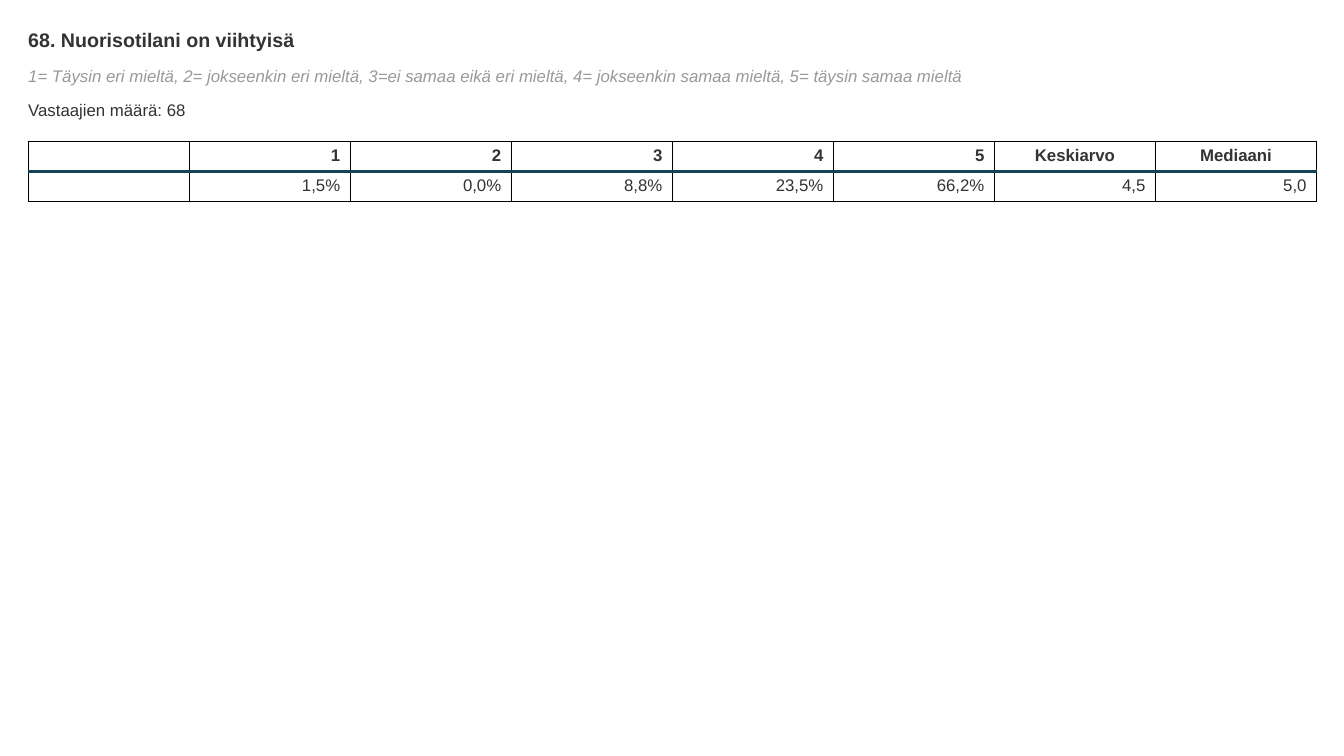
from lxml.etree import SubElement
from pptx import Presentation
from pptx.dml.color import RGBColor
from pptx.enum.text import MSO_ANCHOR, MSO_AUTO_SIZE, PP_ALIGN
from pptx.oxml.ns import qn
from pptx.util import Inches, Pt

DARK = RGBColor(0x33, 0x33, 0x33)
GREY = RGBColor(0x99, 0x99, 0x99)
BLACK = RGBColor(0, 0, 0)
TEAL = RGBColor(0x12, 0x44, 0x56)

LEFT, WIDTH = 0.28, 12.78
ROW_HEIGHT = 0.3
HEADINGS = ["", "1", "2", "3", "4", "5", "Keskiarvo", "Mediaani"]
RESULTS = ["", "1,5%", "0,0%", "8,8%", "23,5%", "66,2%", "4,5", "5,0"]


def write(para, text, align=PP_ALIGN.LEFT, color=DARK, **formats):
    para.alignment = align
    span = para.add_run()
    span.text = text
    span.font.color.rgb = color
    values = {"name": "Arial", "size": Pt(12), "bold": False, **formats}
    for name, value in values.items():
        setattr(span.font, name, value)


def fill_line(box, top, height, text, **formats):
    box.left, box.top = Inches(LEFT), Inches(top)
    box.width, box.height = Inches(WIDTH), Inches(height)
    frame = box.text_frame
    settings = {
        "word_wrap": True,
        "auto_size": MSO_AUTO_SIZE.SHAPE_TO_FIT_TEXT,
        "vertical_anchor": MSO_ANCHOR.TOP,
        "margin_left": 0,
        "margin_right": 0,
        "margin_top": 0,
        "margin_bottom": 0,
    }
    for name, value in settings.items():
        setattr(frame, name, value)
    write(frame.paragraphs[0], text, **formats)


def add_line(page, top, text, **formats):
    box = page.shapes.add_textbox(0, 0, 0, 0)
    fill_line(box, top, 0.2, text, **formats)


def set_borders(cell, colors):
    properties = cell._tc.get_or_add_tcPr()
    for side, color in colors.items():
        points = 2 if color == TEAL else 1
        line = SubElement(properties, qn(f"a:ln{side}"), w=str(Pt(points)))
        fill = SubElement(line, qn("a:solidFill"))
        SubElement(fill, qn("a:srgbClr"), val=str(color))


def add_results(page, left, top, width):
    rows = [HEADINGS, RESULTS]
    frame = page.shapes.add_table(
        len(rows), len(HEADINGS), Inches(left), Inches(top),
        Inches(width), Inches(ROW_HEIGHT * len(rows)))
    table = frame.table
    table.first_row = table.horz_banding = False
    for row, texts in enumerate(rows):
        heading = row == 0
        for column, text in enumerate(texts):
            cell = table.cell(row, column)
            set_borders(cell, {
                "L": BLACK,
                "R": BLACK,
                "T": BLACK if heading else TEAL,
                "B": TEAL if heading else BLACK,
            })
            cell.fill.background()
            para = cell.text_frame.paragraphs[0]
            if text:
                centred = heading and not text.isdigit()
                align = PP_ALIGN.CENTER if centred else PP_ALIGN.RIGHT
                write(para, text, align, bold=heading)
            else:
                SubElement(para._p, qn("a:endParaRPr"), sz="1200")


def build_question(deck):
    page = deck.slides.add_slide(deck.slide_layouts[5])
    fill_line(page.shapes.title, 0.28, 0.23, "68. Nuorisotilani on viihtyisä",
              size=Pt(14), bold=True)
    add_line(page, 0.65,
             "1= Täysin eri mieltä, 2= jokseenkin eri mieltä, "
             "3=ei samaa eikä eri mieltä, 4= jokseenkin samaa mieltä, "
             "5= täysin samaa mieltä", color=GREY, italic=True)
    add_line(page, 0.99, "Vastaajien määrä: 68")
    add_results(page, LEFT, 1.4, WIDTH)


def main():
    deck = Presentation()
    deck.slide_width, deck.slide_height = Inches(13.33), Inches(7.5)
    build_question(deck)
    deck.save("out.pptx")


if __name__ == "__main__":
    main()
